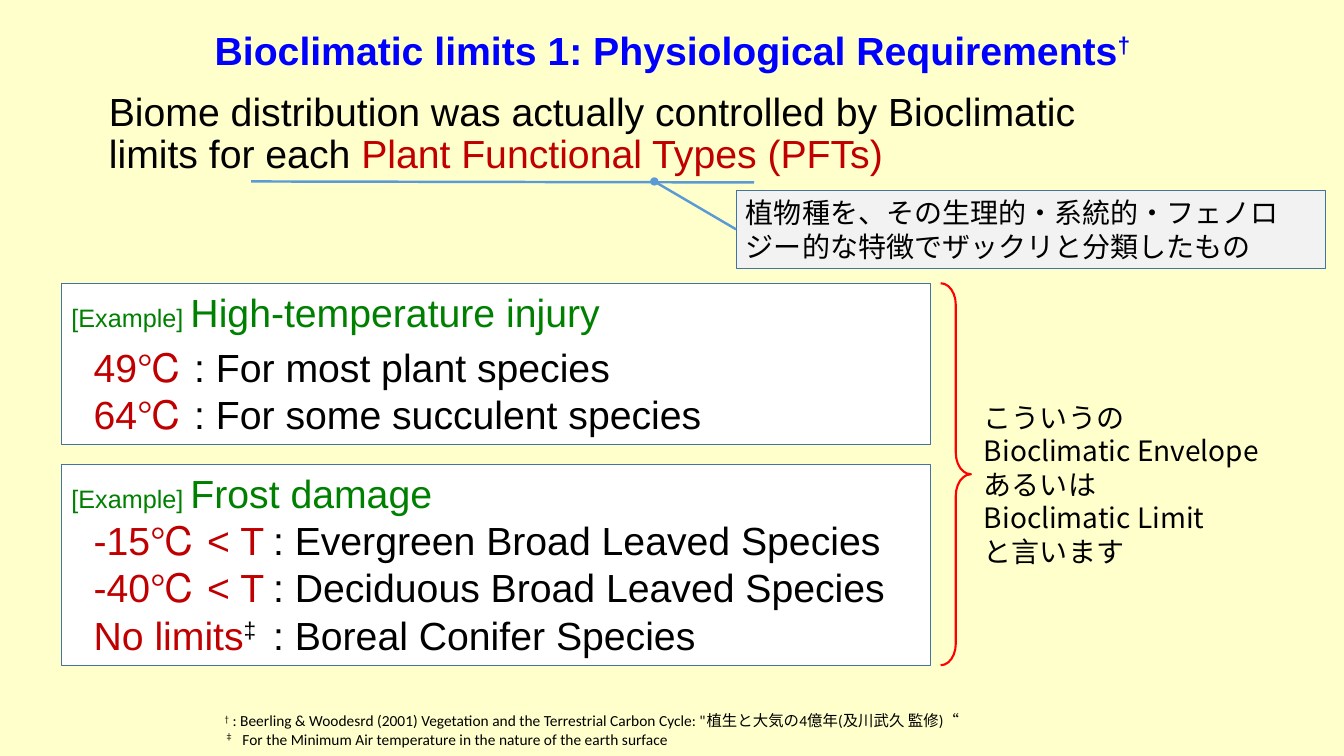
from dataclasses import dataclass

from lxml.etree import SubElement
from pptx import Presentation
from pptx.dml.color import RGBColor
from pptx.enum.shapes import MSO_CONNECTOR, MSO_SHAPE
from pptx.enum.text import MSO_ANCHOR, MSO_AUTO_SIZE, PP_ALIGN
from pptx.oxml.ns import qn
from pptx.shapes.autoshape import Shape
from pptx.shapes.connector import Connector
from pptx.slide import Slide
from pptx.text.text import TextFrame
from pptx.util import Inches, Pt


@dataclass(frozen=True)
class Theme:
    page: str = "FFFFCC"
    panel: str = "FFFFFF"
    note: str = "F2F2F2"
    border: str = "43739E"
    pointer: str = "5B9BD5"
    brace: str = "FF0000"
    text: str = "000000"
    heading: str = "0000FF"
    example: str = "008000"
    accent: str = "C00000"
    latin: str = "Arial"
    japanese: str = "Noto Sans CJK JP"
    footnote: str = "Calibri"
    large: int = 28
    medium: int = 20
    label: int = 18
    small: int = 11


THEME = Theme()


@dataclass(frozen=True)
class Area:
    left: float
    top: float
    width: float
    height: float

    def lengths(self) -> tuple[int, int, int, int]:
        return (Inches(self.left), Inches(self.top),
                Inches(self.width), Inches(self.height))


@dataclass(frozen=True)
class Span:
    text: str
    color: str = THEME.text
    size: int = THEME.large
    font: str = THEME.latin
    bold: bool = False
    raised: bool = False


@dataclass(frozen=True)
class Para:
    spans: tuple[Span, ...]
    align: PP_ALIGN = PP_ALIGN.LEFT
    before: float = 0
    after: float = 0
    line_spacing: float = 1.0
    indent: float = 0
    tab: float = 0


@dataclass(frozen=True)
class Panel:
    area: Area
    fill: str
    paras: tuple[Para, ...]


def rgb(color: str) -> RGBColor:
    return RGBColor.from_string(color)


def write(frame: TextFrame, paras: tuple[Para, ...],
          anchor: MSO_ANCHOR = MSO_ANCHOR.TOP) -> None:
    frame.word_wrap = True
    frame.auto_size = MSO_AUTO_SIZE.NONE
    frame.vertical_anchor = anchor
    for index, item in enumerate(paras):
        para = frame.add_paragraph() if index else frame.paragraphs[0]
        para.alignment = item.align
        para.line_spacing = item.line_spacing
        para.space_before, para.space_after = Pt(item.before), Pt(item.after)
        properties = para._p.get_or_add_pPr()
        if item.indent:
            properties.set("marL", "0")
            properties.set("indent", str(Inches(item.indent)))
        if item.tab:
            stops = SubElement(properties, qn("a:tabLst"))
            SubElement(stops, qn("a:tab"), pos=str(Inches(item.tab)), algn="l")
        for span in item.spans:
            run = para.add_run()
            run.text = span.text
            run.font.size = Pt(span.size)
            run.font.bold = span.bold
            run.font.color.rgb = rgb(span.color)
            run.font.name = span.font
            run_properties = run._r.get_or_add_rPr()
            SubElement(run_properties, qn("a:ea"), typeface=THEME.japanese)
            if span.raised:
                run_properties.set("baseline", "30000")


def add_text(page: Slide, area: Area, paras: tuple[Para, ...]) -> None:
    write(page.shapes.add_textbox(*area.lengths()).text_frame, paras)


def add_panel(page: Slide, panel: Panel) -> Shape:
    box = page.shapes.add_shape(MSO_SHAPE.RECTANGLE, *panel.area.lengths())
    box.shadow.inherit = False
    box.fill.solid()
    box.fill.fore_color.rgb = rgb(panel.fill)
    box.line.color.rgb = rgb(THEME.border)
    box.line.width = Pt(0.75)
    write(box.text_frame, panel.paras)
    return box


def add_brace(page: Slide, area: Area) -> None:
    brace = page.shapes.add_shape(MSO_SHAPE.RIGHT_BRACE, *area.lengths())
    brace.shadow.inherit = False
    brace.adjustments[0], brace.adjustments[1] = 0.71, 0.5
    brace.fill.background()
    brace.line.color.rgb = rgb(THEME.brace)
    brace.line.width = Pt(1.5)


def add_line(page: Slide, start: tuple[float, float],
             end: tuple[float, float]) -> Connector:
    points = [Inches(value) for value in (*start, *end)]
    line = page.shapes.add_connector(MSO_CONNECTOR.STRAIGHT, *points)
    line.line.color.rgb = rgb(THEME.pointer)
    line.line.width = Pt(1.75)
    SubElement(line._element.spPr, qn("a:effectLst"))
    return line


def example_heading(text: str, after: float = 0) -> Para:
    return Para((Span("[Example] ", THEME.example, THEME.label),
                 Span(text, THEME.example)), after=after)


def limit(value: str, species: str, gap: str = "\t", mark: str = "") -> Para:
    """One limit value in the accent colour, then the plants it holds for."""
    spans = [Span(value, THEME.accent), Span(gap), Span(f": {species}")]
    if mark:
        spans.insert(1, Span(mark, raised=True))
    return Para(tuple(spans), indent=0.22, tab=2 if gap == "\t" else 0)


def japanese(text: str) -> Para:
    return Para((Span(text, size=THEME.medium, font=THEME.japanese),))


def footnote(mark: str, text: str) -> Para:
    return Para((Span(mark, size=THEME.small, font=THEME.footnote, raised=True),
                 Span(text, size=THEME.small, font=THEME.footnote)))


HEADING = Para((Span("Bioclimatic limits 1: Physiological Requirements",
                     THEME.heading, bold=True),
                Span("†", THEME.heading, bold=True, raised=True)),
               align=PP_ALIGN.CENTER, before=6, after=6)
STATEMENT = Para((Span("Biome distribution was actually controlled by "
                       "Bioclimatic limits for each "),
                  Span("Plant Functional Types (PFTs)", THEME.accent)),
                 line_spacing=0.9)
FOOTNOTES = (
    footnote("†", " : Beerling & Woodesrd (2001) Vegetation and the Terrestrial "
                  "Carbon Cycle: \"植生と大気の4億年(及川武久 監修)“"),
    footnote("‡　", "For the Minimum Air temperature in the nature of "
                   "the earth surface"),
)
EXAMPLES = (
    Panel(Area(0.61, 2.81, 8.62, 1.6), THEME.panel, (
        example_heading("High-temperature injury", after=6),
        limit("49℃", "For most plant species", gap=" "),
        limit("64℃", "For some succulent species", gap=" "))),
    Panel(Area(0.61, 4.61, 8.62, 1.99), THEME.panel, (
        example_heading("Frost damage"),
        limit("-15℃ < T", "Evergreen Broad Leaved Species"),
        limit("-40℃ < T", "Deciduous Broad Leaved Species"),
        limit("No limits", "Boreal Conifer Species", mark="‡"))),
)
PFT_NOTE = Panel(Area(7.3, 1.89, 5.85, 0.77), THEME.note, (
    japanese("植物種を、その生理的・系統的・フェノロジー的な特徴で"
             "ザックリと分類したもの"),))
ENVELOPE = tuple(japanese(text) for text in (
    "こういうの", "Bioclimatic Envelope", "あるいは",
    "Bioclimatic Limit", "と言います"))


def main() -> None:
    deck = Presentation()
    deck.slide_width, deck.slide_height = Inches(13.33), Inches(7.5)
    page = deck.slides.add_slide(deck.slide_layouts[5])
    page.background.fill.solid()
    page.background.fill.fore_color.rgb = rgb(THEME.page)

    title = page.shapes.title
    title.left, title.top, title.width, title.height = Area(
        0.98, 0.86, 10.61, 0.95).lengths()
    write(title.text_frame, (STATEMENT,), MSO_ANCHOR.MIDDLE)

    add_text(page, Area(2.13, 7.01, 11.2, 0.47), FOOTNOTES)
    add_text(page, Area(1.47, 0.21, 10.4, 0.57), (HEADING,))
    for example in EXAMPLES:
        add_panel(page, example)
    note = add_panel(page, PFT_NOTE)
    add_brace(page, Area(9.33, 2.81, 0.3, 3.79))
    add_text(page, Area(9.66, 3.92, 3.09, 1.78), ENVELOPE)

    add_line(page, (2.49, 1.8), (7.48, 1.81))
    pointer = add_line(page, (7.3, 2.28), (6.49, 1.8))
    pointer.begin_connect(note, 1)
    SubElement(pointer.line._get_or_add_ln(), qn("a:tailEnd"), type="oval")

    deck.save("out.pptx")


if __name__ == "__main__":
    main()
